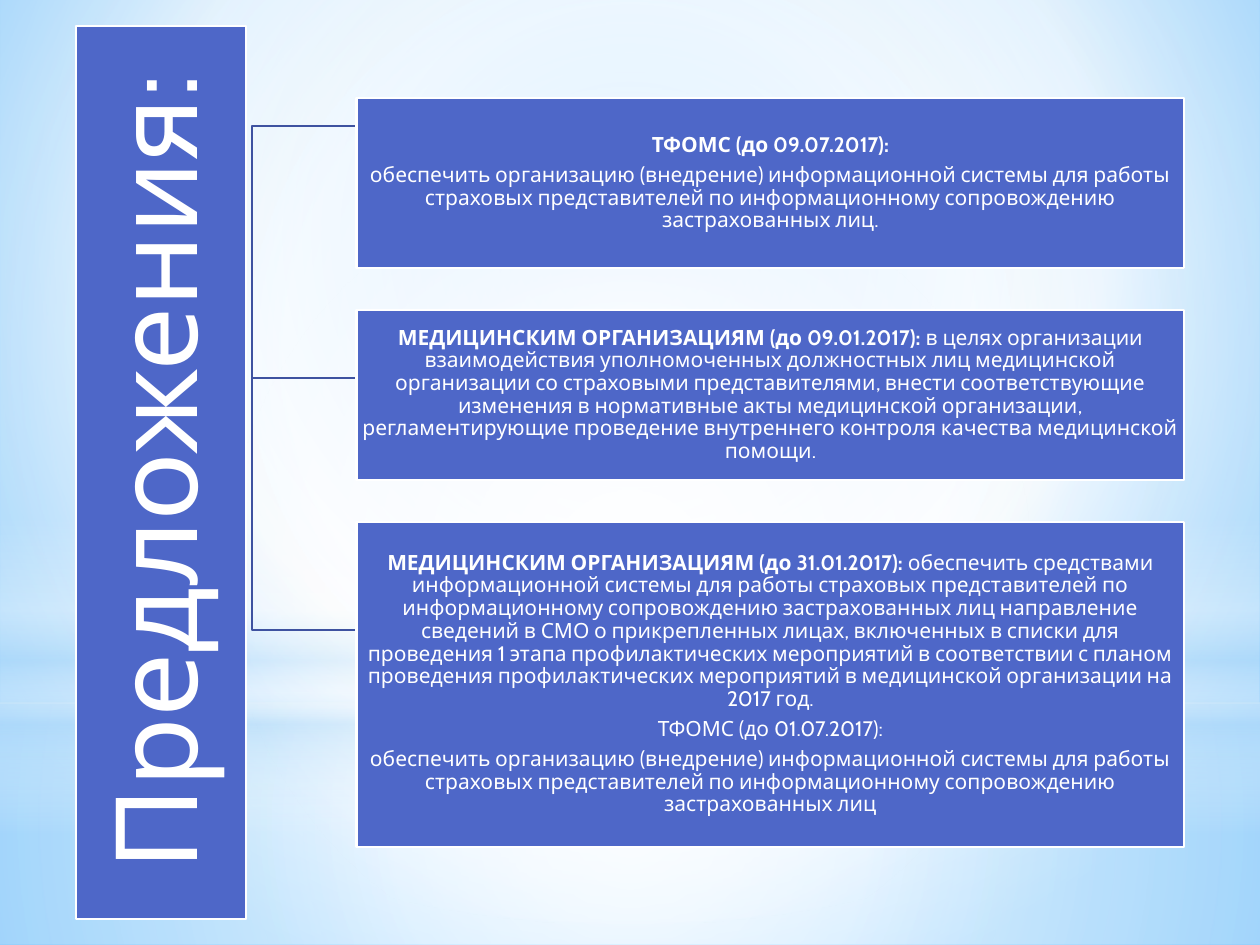
from lxml import etree
from pptx import Presentation
from pptx.dml.color import RGBColor
from pptx.enum.shapes import MSO_SHAPE
from pptx.enum.text import MSO_ANCHOR, PP_ALIGN
from pptx.oxml.ns import qn
from pptx.util import Inches, Pt

# Content: cards hold paragraphs, paragraphs hold (text, bold) runs
TITLE = [[("Предложения:", False)]]
SYSTEM_TASK = ("обеспечить организацию (внедрение) информационной системы для работы "
               "страховых представителей по информационному сопровождению застрахованных лиц")
CARDS = [
    (1.35, [
        [("ТФОМС (до 09.07.2017):", True)],
        [(SYSTEM_TASK + ".", False)],
    ]),
    (1.35, [
        [("МЕДИЦИНСКИМ ОРГАНИЗАЦИЯМ (до 09.01.2017):", True),
         (" в целях организации взаимодействия уполномоченных должностных лиц медицинской "
          "организации со страховыми представителями, внести соответствующие изменения в "
          "нормативные акты медицинской организации, регламентирующие проведение внутреннего "
          "контроля качества медицинской помощи.", False)],
    ]),
    (2.58, [
        [("МЕДИЦИНСКИМ ОРГАНИЗАЦИЯМ (до 31.01.2017):", True),
         (" обеспечить средствами информационной системы для работы страховых представителей "
          "по информационному сопровождению застрахованных лиц направление сведений в СМО о "
          "прикрепленных лицах, включенных в списки для проведения 1 этапа профилактических "
          "мероприятий в соответствии с планом проведения профилактических мероприятий в "
          "медицинской организации на 2017 год.", False)],
        [("ТФОМС (до 01.07.2017):", False)],
        [(SYSTEM_TASK, False)],
    ]),
]

THEME = {
    "font": "Cabin", "title_size": 65, "card_size": 12, "line_width": 1.25,
    "box": "4E67C8", "text": "FFFFFF", "branch": "3E52A0",
    "white": "FFFFFF", "haze": "B4DCFA", "sky": "9ED5FF", "deep_sky": "5BB9FF",
}

# Gradient stops are (position %, colour, opacity %)
CENTRE = (50, 50, 50, 50)
SKY_STOPS = [(0, "sky", 100), (60, "white", 100), (100, "deep_sky", 100)]
BACKDROP = [
    (MSO_SHAPE.RECTANGLE, (0, 5.58, 10, 1.92), CENTRE,
     [(0, "white", 91), (37, "white", 76), (100, "haze", 79)]),
    (MSO_SHAPE.RECTANGLE, (0, 0, 10, 5.58), CENTRE,
     [(0, "white", 89), (48, "white", 62), (100, "haze", 79)]),
    (MSO_SHAPE.RECTANGLE, (0, 4.12, 10, 2.5), None,
     [(0, "white", 0), (29, "white", 30), (45, "haze", 40),
      (55, "white", 26), (65, "haze", 60), (100, "white", 0)]),
    (MSO_SHAPE.OVAL, (0, 1.75, 10, 5.58), CENTRE,
     [(0, "white", 100), (56, "white", 0)]),
]

SLIDE_W, SLIDE_H = 10, 7.5
TITLE_LEFT, TITLE_W, TITLE_H = 0.6, 1.35, 7.09
CARD_LEFT, CARD_W, CARD_GAP = 2.83, 6.57, 0.33


def color(name):
    return RGBColor.from_string(THEME[name])


def gradient(stops, focus):
    """Radial gradient around focus, or a top-down one without focus."""
    fill = etree.Element(qn("a:gradFill"), rotWithShape="1")
    stop_list = etree.SubElement(fill, qn("a:gsLst"))
    for position, name, opacity in stops:
        stop = etree.SubElement(stop_list, qn("a:gs"), pos=str(position * 1000))
        tint = etree.SubElement(stop, qn("a:srgbClr"), val=THEME[name])
        if opacity < 100:
            etree.SubElement(tint, qn("a:alpha"), val=str(opacity * 1000))
    if focus:
        radial = etree.SubElement(fill, qn("a:path"), {"path": "circle"})
        edges = {side: str(value * 1000) for side, value in zip("ltrb", focus)}
        etree.SubElement(radial, qn("a:fillToRect"), edges)
    else:
        etree.SubElement(fill, qn("a:lin"), ang="5400000", scaled="0")
    return fill


def set_gradient(parent, stops, focus):
    """Put a gradient in the place of the parent's solid fill."""
    parent.replace(parent.find(qn("a:solidFill")), gradient(stops, focus))


def add_backdrop(slide):
    slide.background.fill.solid()
    set_gradient(slide.element.find(".//" + qn("p:bgPr")), SKY_STOPS, (20, 10, 20, 60))
    for preset, place, focus, stops in BACKDROP:
        layer = slide.shapes.add_shape(preset, *map(Inches, place))
        layer.shadow.inherit = False
        layer.line.fill.background()
        layer.fill.solid()
        set_gradient(layer.element.spPr, stops, focus)


def add_branch(slide, start, end):
    middle = (start[0] + end[0]) / 2
    builder = slide.shapes.build_freeform(*start, scale=Inches(1))
    builder.add_line_segments([(middle, start[1]), (middle, end[1]), end], close=False)
    branch = builder.convert_to_shape()
    branch.shadow.inherit = False
    branch.fill.background()
    branch.line.color.rgb = color("branch")
    branch.line.width = Pt(THEME["line_width"])


def add_box(slide, place, paragraphs, size, inset, rotation=0):
    box = slide.shapes.add_shape(MSO_SHAPE.RECTANGLE, *map(Inches, place))
    box.rotation = rotation
    box.shadow.inherit = False
    box.fill.solid()
    box.fill.fore_color.rgb = color("box")
    box.line.color.rgb = color("white")
    box.line.width = Pt(THEME["line_width"])

    frame = box.text_frame
    frame.word_wrap = True
    frame.vertical_anchor = MSO_ANCHOR.MIDDLE
    frame.margin_left = frame.margin_right = Inches(inset)
    frame.margin_top = frame.margin_bottom = Inches(inset)
    for index, runs in enumerate(paragraphs):
        paragraph = frame.add_paragraph() if index else frame.paragraphs[0]
        paragraph.alignment = PP_ALIGN.CENTER
        paragraph.line_spacing = 0.9
        paragraph.space_after = Pt(0.35 * size)
        for text, bold in runs:
            run = paragraph.add_run()
            run.text = text
            run.font.name = THEME["font"]
            run.font.size = Pt(size)
            run.font.bold = bold
            run.font.color.rgb = color("text")


def main():
    deck = Presentation()
    deck.slide_width, deck.slide_height = Inches(SLIDE_W), Inches(SLIDE_H)
    slide = deck.slides.add_slide(deck.slide_layouts[6])
    add_backdrop(slide)

    # Stack the cards around the middle of the slide
    middle = SLIDE_H / 2
    stack = sum(height for height, _ in CARDS) + CARD_GAP * (len(CARDS) - 1)
    top = middle - stack / 2
    placed = []
    for height, paragraphs in CARDS:
        placed.append(((CARD_LEFT, top, CARD_W, height), paragraphs))
        top += height + CARD_GAP

    # Branches from the title to each card
    for (left, card_top, _, height), _ in reversed(placed):
        add_branch(slide, (TITLE_LEFT + TITLE_W, middle), (left, card_top + height / 2))

    # Title bar, turned to read upwards
    title_place = (TITLE_LEFT + (TITLE_W - TITLE_H) / 2, middle - TITLE_W / 2,
                   TITLE_H, TITLE_W)
    add_box(slide, title_place, TITLE, THEME["title_size"], 0.05, rotation=270)

    # Cards
    for place, paragraphs in placed:
        add_box(slide, place, paragraphs, THEME["card_size"], 0.01)

    deck.save("out.pptx")


if __name__ == "__main__":
    main()
